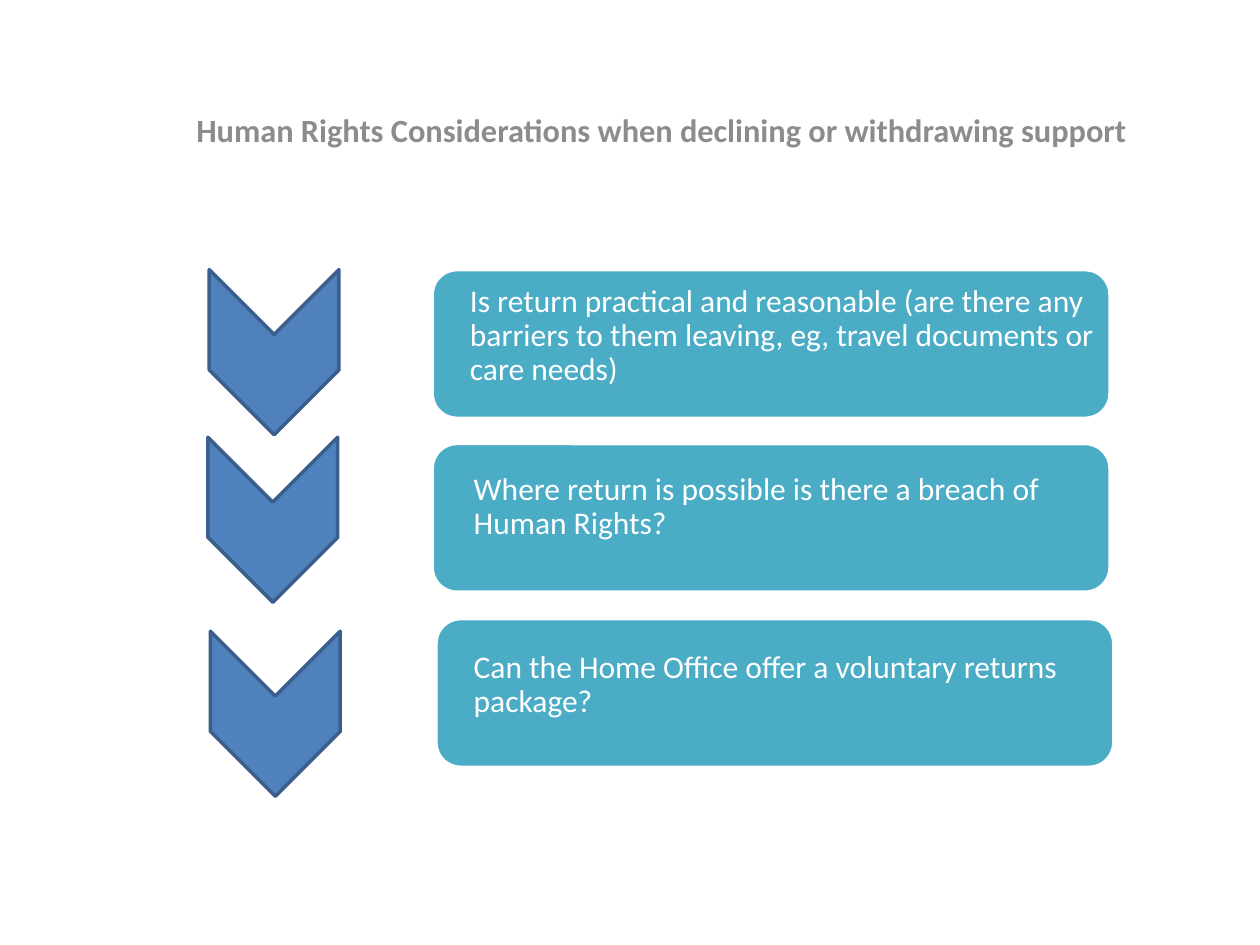
import pptx
import pptx.util
import pptx.dml.color
import pptx.enum.shapes
import pptx.enum.text

Inches, Pt = pptx.util.Inches, pptx.util.Pt
RGBColor = pptx.dml.color.RGBColor
MSO_SHAPE = pptx.enum.shapes.MSO_SHAPE
MSO_ANCHOR = pptx.enum.text.MSO_ANCHOR

BLUE = RGBColor(0x4F, 0x81, 0xBD)
DARK_BLUE = RGBColor(0x3A, 0x5F, 0x8C)
TEAL = RGBColor(0x4B, 0xAC, 0xC6)
WHITE = RGBColor(0xFF, 0xFF, 0xFF)
GREY = RGBColor(0x8C, 0x8C, 0x8C)

# Content
TITLE = "Human Rights Considerations when declining or withdrawing support"
# question, then left and top of its chevron, its card and its text, text height
STEPS = [
    ("Is return practical and reasonable (are there any barriers to them "
     "leaving, eg, travel documents or care needs)",
     (1.52, 2.28), (3.43, 2.14), (3.66, 2.14), 1.06),
    ("Where return is possible is there a breach of Human Rights?",
     (1.51, 3.61), (3.43, 3.52), (3.69, 3.48), 1.1),
    ("Can the Home Office offer a voluntary returns package?",
     (1.53, 5.15), (3.46, 4.91), (3.69, 4.91), 1.06),
]
CHEVRON_SIZE = (1.31, 1.03)
CARD_SIZE = (5.38, 1.18)
TEXT_WIDTH = 5.16


def add_box(shapes, kind, pos, size, fill, line):
    sp = shapes.add_shape(kind, *map(Inches, pos + size))
    sp.shadow.inherit = False
    sp.fill.solid()
    sp.fill.fore_color.rgb = fill
    sp.line.color.rgb = line
    sp.line.width = Pt(2)
    return sp


def add_text(shapes, text, pos, size, points, color, anchor, inset=None):
    tf = shapes.add_textbox(*map(Inches, pos + size)).text_frame
    tf.word_wrap = True
    tf.vertical_anchor = anchor
    if inset is not None:
        tf.margin_left = tf.margin_right = Inches(inset)
        tf.margin_top = tf.margin_bottom = Inches(inset)
    p = tf.paragraphs[0]
    r = p.add_run()
    r.text = text
    r.font.name = "Calibri"
    r.font.size = Pt(points)
    r.font.color.rgb = color
    return p


prs = pptx.Presentation()
prs.slide_width, prs.slide_height = Inches(10), Inches(7.5)
slide = prs.slides.add_slide(prs.slide_layouts[6])

# Chevrons pointing down
for question, chevron_pos, card_pos, text_pos, text_height in STEPS:
    sp = add_box(slide.shapes, MSO_SHAPE.CHEVRON, chevron_pos, CHEVRON_SIZE,
                 BLUE, DARK_BLUE)
    sp.rotation = 90

# Title
p = add_text(slide.shapes, TITLE, (1.46, 0.68), (7.83, 0.55), 18.5, GREY,
             MSO_ANCHOR.BOTTOM)
p.runs[0].font.bold = True

# Question cards, each grouped with its text
for question, chevron_pos, card_pos, text_pos, text_height in STEPS:
    group = slide.shapes.add_group_shape()
    add_box(group.shapes, MSO_SHAPE.ROUNDED_RECTANGLE, card_pos, CARD_SIZE,
            TEAL, WHITE)
    p = add_text(group.shapes, question, text_pos, (TEXT_WIDTH, text_height),
                 18, WHITE, MSO_ANCHOR.MIDDLE, inset=0.07)
    p.line_spacing = 0.9

prs.save("out.pptx")
